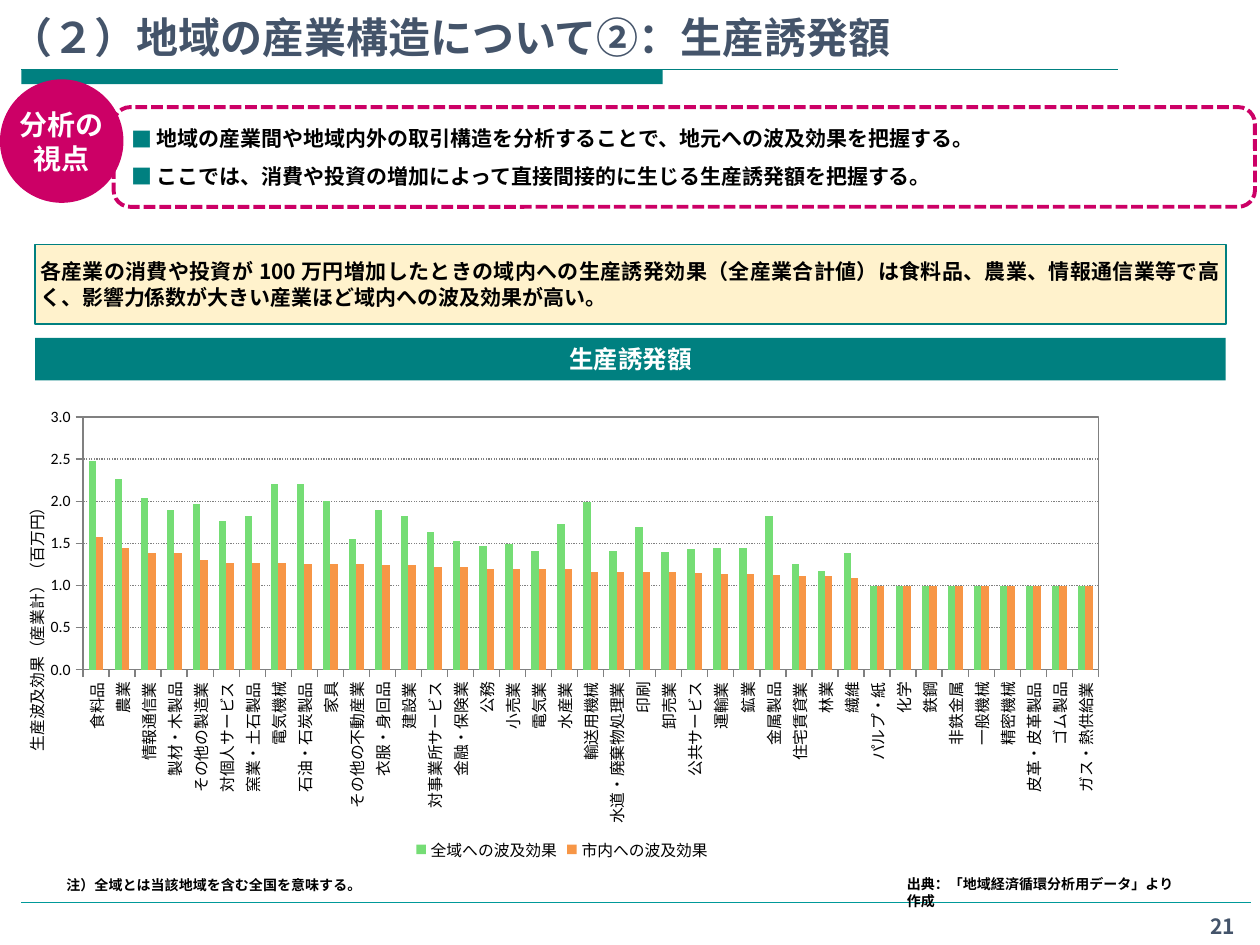
from dataclasses import dataclass

from lxml.etree import SubElement
from pptx import Presentation
from pptx.chart.data import CategoryChartData
from pptx.dml.color import RGBColor
from pptx.enum.chart import XL_CHART_TYPE as ChartType, XL_LEGEND_POSITION as LegendPosition
from pptx.enum.chart import XL_TICK_MARK as TickMark
from pptx.enum.dml import MSO_LINE as Dash
from pptx.enum.shapes import MSO_CONNECTOR as Connector, MSO_SHAPE as Shape
from pptx.enum.text import MSO_ANCHOR as Anchor, MSO_AUTO_SIZE as AutoSize, PP_ALIGN as Align
from pptx.oxml import parse_xml
from pptx.oxml.ns import nsdecls, qn
from pptx.util import Cm, Pt

TEAL = RGBColor(0x00, 0x80, 0x80)
LIGHT_TEAL = RGBColor(0x00, 0x99, 0x99)
MAGENTA = RGBColor(0xCC, 0x00, 0x66)
CREAM = RGBColor(0xFF, 0xF2, 0xCC)
SLATE = RGBColor(0x44, 0x54, 0x6A)
GRAY = RGBColor(0x80, 0x80, 0x80)
BLACK = RGBColor(0x00, 0x00, 0x00)
WHITE = RGBColor(0xFF, 0xFF, 0xFF)
GREEN = RGBColor(0x75, 0xDD, 0x75)
ORANGE = RGBColor(0xF7, 0x96, 0x46)
FONT = "Noto Sans CJK JP"
CHART_FONT = "Calibri"

POINTS = [
    "地域の産業間や地域内外の取引構造を分析することで、地元への波及効果を把握する。",
    "ここでは、消費や投資の増加によって直接間接的に生じる生産誘発額を把握する。",
]
INDUSTRIES = [
    "食料品", "農業", "情報通信業", "製材・木製品", "その他の製造業", "対個人サービス",
    "窯業・土石製品", "電気機械", "石油・石炭製品", "家具", "その他の不動産業", "衣服・身回品",
    "建設業", "対事業所サービス", "金融・保険業", "公務", "小売業", "電気業", "水産業",
    "輸送用機械", "水道・廃棄物処理業", "印刷", "卸売業", "公共サービス", "運輸業", "鉱業",
    "金属製品", "住宅賃貸業", "林業", "繊維", "パルプ・紙", "化学", "鉄鋼", "非鉄金属",
    "一般機械", "精密機械", "皮革・皮革製品", "ゴム製品", "ガス・熱供給業",
]


@dataclass(frozen=True)
class Box:
    left: float
    top: float
    width: float
    height: float

    def lengths(self) -> tuple:
        return Cm(self.left), Cm(self.top), Cm(self.width), Cm(self.height)


@dataclass(frozen=True)
class Series:
    name: str
    color: RGBColor
    values: list


SERIES = [
    Series("全域への波及効果", GREEN, [
        2.48, 2.27, 2.04, 1.9, 1.97, 1.77, 1.83, 2.2, 2.21, 2, 1.55, 1.89, 1.82, 1.63, 1.53,
        1.47, 1.49, 1.41, 1.73, 1.99, 1.41, 1.69, 1.4, 1.43, 1.44, 1.45, 1.82, 1.26, 1.17,
        1.38] + [1] * 9),
    Series("市内への波及効果", ORANGE, [
        1.58, 1.45, 1.39, 1.39, 1.3, 1.27, 1.27, 1.27, 1.25, 1.25, 1.25, 1.24, 1.24, 1.22,
        1.22, 1.2, 1.19, 1.19, 1.19, 1.16, 1.16, 1.16, 1.16, 1.15, 1.14, 1.14, 1.12, 1.11,
        1.11, 1.09] + [1] * 9),
]


def write(para, text: str, *, size=12, color=BLACK, align=Align.LEFT, leading=1.2) -> None:
    """Fill a paragraph with bold text; a line feed becomes a line break."""
    para.text = text.replace("\n", "\v")
    para.alignment = align
    if leading:
        para.line_spacing = Pt(size * leading)
    for span in para.runs:
        span.font.name, span.font.size, span.font.bold = FONT, Pt(size), True
        span.font.color.rgb = color
        SubElement(span.font._element if hasattr(span.font, "_element")
                   else span._r.get_or_add_rPr(), qn("a:ea")).set("typeface", FONT)


def add_text(page, box: Box, text: str, **style) -> None:
    frame = page.shapes.add_textbox(*box.lengths()).text_frame
    frame.word_wrap = True
    write(frame.paragraphs[0], text, **style)


def add_panel(page, kind, box: Box, *, fill=None, line=None, width=1.0, text="",
              wrap=True, **style):
    panel = page.shapes.add_shape(kind, *box.lengths())
    panel.shadow.inherit = False
    if fill is None:
        panel.fill.background()
    else:
        panel.fill.solid()
        panel.fill.fore_color.rgb = fill
    if line is None:
        panel.line.fill.background()
    else:
        panel.line.color.rgb, panel.line.width = line, Pt(width)
    if text:
        frame = panel.text_frame
        frame.word_wrap, frame.vertical_anchor = wrap, Anchor.MIDDLE
        frame.margin_left = frame.margin_right = Cm(0.1)
        write(frame.paragraphs[0], text, **style)
    return panel


def add_rule(page, left: float, right: float, top: float, color: RGBColor) -> None:
    rule = page.shapes.add_connector(Connector.STRAIGHT, Cm(left), Cm(top), Cm(right), Cm(top))
    rule.line.color.rgb, rule.line.width = color, Pt(0.75)
    SubElement(rule._element.spPr, qn("a:effectLst"))


def place(frame_shape, box: Box, anchor):
    """Move a placeholder and return its text frame."""
    (frame_shape.left, frame_shape.top,
     frame_shape.width, frame_shape.height) = box.lengths()
    frame = frame_shape.text_frame
    frame.word_wrap, frame.auto_size, frame.vertical_anchor = True, AutoSize.NONE, anchor
    return frame


def add_bullets(frame, items: list) -> None:
    for number, item in enumerate(items):
        para = frame.add_paragraph() if number else frame.paragraphs[0]
        write(para, item, align=Align.JUSTIFY)
        para.space_before, para.space_after = Pt(3 if number else 0), Pt(4)
        props = para._p.get_or_add_pPr()
        props.set("marL", str(Cm(0.5)))
        props.set("indent", str(-Cm(0.5)))
        color = SubElement(SubElement(props, qn("a:buClr")), qn("a:srgbClr"))
        color.set("val", str(TEAL))
        SubElement(props, qn("a:buFont")).set("typeface", FONT)
        SubElement(props, qn("a:buChar")).set("char", "■")


def set_layout(parent, index: int, **settings) -> None:
    """Give a chart part a manual layout."""
    layout = parent.find(qn("c:layout"))
    if layout is not None:
        parent.remove(layout)
    parent.insert(index, parse_xml(f'<c:layout {nsdecls("c")}><c:manualLayout/></c:layout>'))
    for name, value in settings.items():
        SubElement(parent[index][0], qn(f"c:{name}")).set("val", str(value))


def set_chart_font(font, size: int) -> None:
    font.name, font.size, font.bold = CHART_FONT, Pt(size), False
    font.color.rgb = BLACK


def add_effect_chart(page, box: Box) -> None:
    data = CategoryChartData()
    data.categories = INDUSTRIES
    for entry in SERIES:
        data.add_series(entry.name, entry.values)
    chart = page.shapes.add_chart(ChartType.COLUMN_CLUSTERED, *box.lengths(), data).chart
    set_chart_font(chart.font, 10)
    chart.has_title = False
    chart.has_legend = True
    chart.legend.position, chart.legend.include_in_layout = LegendPosition.BOTTOM, False
    set_chart_font(chart.legend.font, 9)

    plot = chart.plots[0]
    plot.gap_width, plot.overlap, plot.vary_by_categories = 150, 0, False
    for series, entry in zip(plot.series, SERIES):
        series.format.fill.solid()
        series.format.fill.fore_color.rgb = entry.color

    # Axes
    names, values = chart.category_axis, chart.value_axis
    for axis in (names, values):
        axis.major_tick_mark, axis.minor_tick_mark = TickMark.OUTSIDE, TickMark.NONE
        axis.format.line.color.rgb = GRAY
        set_chart_font(axis.tick_labels.font, 9)
    names._element.find(qn("c:txPr")).find(qn("a:bodyPr")).set("rot", "-5400000")
    values.minimum_scale, values.maximum_scale, values.major_unit = 0, 3, 0.5
    values.tick_labels.number_format = "0.0;0.0"
    values.tick_labels.number_format_is_linked = False
    grid = values.major_gridlines.format.line
    grid.color.rgb, grid.width, grid.dash_style = GRAY, Pt(0.75), Dash.ROUND_DOT
    frame = values.axis_title.text_frame
    frame.text = "生産波及効果（産業計）（百万円）"
    set_chart_font(frame.paragraphs[0].runs[0].font, 9)
    frame._txBody.find(qn("a:bodyPr")).set("rot", "-5400000")
    set_layout(values.axis_title._element, 1, xMode="edge", yMode="edge", x=0.01, y=0.21)

    # Plot area
    area = chart._chartSpace.chart.plotArea
    set_layout(area, 0, layoutTarget="inner", xMode="edge", yMode="edge",
               x=0.067, y=0.04, w=0.918, h=0.541)
    area.append(parse_xml(
        f'<c:spPr {nsdecls("c", "a")}><a:noFill/><a:ln w="9525"><a:solidFill>'
        f'<a:srgbClr val="{GRAY}"/></a:solidFill></a:ln></c:spPr>'))


def main() -> None:
    deck = Presentation()
    deck.slide_width, deck.slide_height = Cm(25.4), Cm(19.05)
    page = deck.slides.add_slide(deck.slide_layouts[1])

    # Title and rules
    title = place(page.shapes.title, Box(-0.05, 0, 25.45, 1.37), Anchor.BOTTOM)
    write(title.paragraphs[0], "（２）地域の産業構造について②：生産誘発額",
          size=24, color=SLATE, leading=None)
    add_panel(page, Shape.RECTANGLE, Box(0.43, 1.4, 12.93, 0.3), fill=TEAL)
    add_rule(page, 0.43, 22.53, 1.4, TEAL)
    add_rule(page, 0.43, 25.22, 18.19, LIGHT_TEAL)

    # Points of the analysis
    add_bullets(place(page.placeholders[1], Box(2.4, 2.16, 22.79, 2.01), Anchor.MIDDLE), POINTS)
    outline = add_panel(page, Shape.ROUNDED_RECTANGLE, Box(2.29, 2.16, 23.01, 2.01),
                        line=MAGENTA, width=2.25)
    outline.line.dash_style = Dash.SQUARE_DOT
    add_panel(page, Shape.OVAL, Box(0, 1.6, 2.49, 2.49), fill=MAGENTA, text="分析の\n視点",
              wrap=False, size=16, color=WHITE, align=Align.CENTER)

    # Message and chart
    add_panel(page, Shape.RECTANGLE, Box(0.71, 4.93, 24, 1.6), fill=CREAM, line=TEAL,
              text="各産業の消費や投資が100万円増加したときの域内への生産誘発効果（全産業合計値）は"
                   "食料品、農業、情報通信業等で高く、影響力係数が大きい産業ほど域内への波及効果が高い。",
              align=Align.JUSTIFY)
    add_panel(page, Shape.RECTANGLE, Box(0.71, 6.81, 24, 0.86), fill=TEAL, text="生産誘発額",
              size=14, color=WHITE, align=Align.CENTER)
    add_effect_chart(page, Box(0.18, 8.03, 22.3, 9.42))

    # Notes and page number
    add_text(page, Box(1.09, 17.55, 7.11, 0.61), "注）全域とは当該地域を含む全国を意味する。", size=8)
    add_text(page, Box(18.03, 17.53, 6.07, 0.61),
             "出典：「地域経済循環分析用データ」より作成", size=8)
    add_text(page, Box(23.9, 18.29, 1.5, 0.71), "21", color=SLATE, align=Align.CENTER)
    deck.save("out.pptx")


if __name__ == "__main__":
    main()
